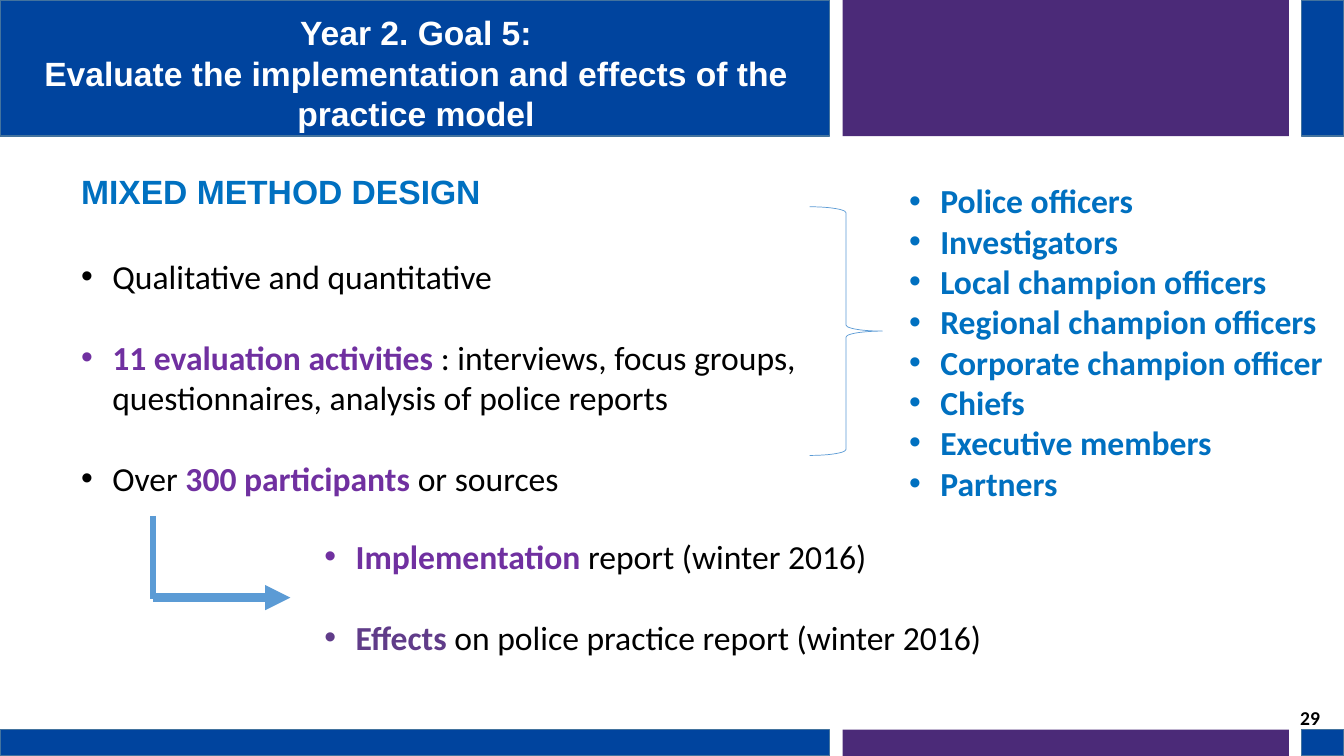
from dataclasses import dataclass

from lxml import etree
from pptx import Presentation
from pptx.dml.color import RGBColor
from pptx.enum.shapes import MSO_CONNECTOR, MSO_SHAPE
from pptx.enum.text import MSO_ANCHOR, PP_ALIGN
from pptx.oxml.ns import qn
from pptx.slide import Slide
from pptx.text.text import TextFrame
from pptx.util import Inches, Pt

RECTANGLE = MSO_SHAPE.RECTANGLE
RIGHT_BRACE = MSO_SHAPE.RIGHT_BRACE
STRAIGHT = MSO_CONNECTOR.STRAIGHT
TOP = MSO_ANCHOR.TOP
CENTER = PP_ALIGN.CENTER

COLORS = {
    "band_blue": "00449E",
    "band_edge": "43739E",
    "band_purple": "4B2A78",
    "black": "000000",
    "white": "FFFFFF",
    "purple": "7030A0",
    "soft_purple": "603C89",
    "blue": "0070C0",
    "line_blue": "5B9BD5",
}
SLIDE_WIDTH = Inches(13.33)
SLIDE_HEIGHT = Inches(7.5)
BULLET_INDENT = Inches(0.31)
BLANK_LINE = Pt(28.8)
TITLE_LAYOUT = 5


@dataclass(frozen=True)
class Area:
    """Percentages of the slide's width and height."""

    left: float
    top: float
    width: float
    height: float

    def box(self) -> tuple[int, int, int, int]:
        return (
            across(self.left),
            down(self.top),
            across(self.width),
            down(self.height),
        )


@dataclass(frozen=True)
class Band:
    area: Area
    fill: str
    edge: str | None = None


@dataclass(frozen=True)
class Piece:
    text: str
    color: str = "black"
    bold: bool = False


@dataclass(frozen=True)
class Label:
    area: Area
    piece: Piece
    size: int
    font: str
    wrap: bool = True


@dataclass(frozen=True)
class BulletList:
    area: Area
    items: list[list[Piece]]
    gap: int = 0


@dataclass(frozen=True)
class Segment:
    start: tuple[float, float]
    end: tuple[float, float]
    weight: float
    arrow: bool = False


def across(percent: float) -> int:
    return round(SLIDE_WIDTH * percent / 100)


def down(percent: float) -> int:
    return round(SLIDE_HEIGHT * percent / 100)


def color(name: str) -> RGBColor:
    return RGBColor.from_string(COLORS[name])


BANDS = [
    Band(Area(left, top, width, height), fill, edge)
    for top, height in ((0, 18), (96.5, 3.5))
    for left, width, fill, edge in (
        (0, 61.7, "band_blue", "band_edge"),
        (96.85, 3.15, "band_blue", "band_edge"),
        (62.7, 33.2, "band_purple", None),
    )
]

TITLE = Label(
    Area(1.05, 0.95, 59.8, 17.5),
    Piece(
        "Year 2. Goal 5:\vEvaluate the implementation and effects of the practice model",
        "white",
        True,
    ),
    24,
    "Arial",
)

LABELS = [
    Label(
        Area(5.3, 22, 31.5, 6.7),
        Piece("MIXED METHOD DESIGN", "blue", True),
        24,
        "Arial",
        wrap=False,
    ),
    Label(Area(96, 92.65, 3.3, 4.5), Piece("29", "black", True), 14, "Calibri"),
]

PEOPLE = [
    "Police officers",
    "Investigators",
    "Local champion officers",
    "Regional champion officers",
    "Corporate champion officer",
    "Chiefs",
    "Executive members",
    "Partners",
]

BULLET_LISTS = [
    BulletList(
        Area(5.3, 33.2, 56.5, 33.6),
        [
            [Piece("Qualitative and quantitative")],
            [
                Piece("11 evaluation activities ", "purple", True),
                Piece(": interviews, focus groups, questionnaires, analysis of police reports"),
            ],
            [Piece("Over "), Piece("300 participants ", "purple", True), Piece("or sources")],
        ],
        BLANK_LINE,
    ),
    BulletList(
        Area(66.9, 23.2, 33.1, 50.7),
        [[Piece(person, "blue", True)] for person in PEOPLE],
    ),
    BulletList(
        Area(23.4, 70.25, 66, 17.5),
        [
            [Piece("Implementation", "purple", True), Piece(" report (winter 2016)")],
            [Piece("Effects", "soft_purple", True), Piece(" on police practice report (winter 2016)")],
        ],
        BLANK_LINE,
    ),
]

BRACE = Area(60.25, 27.35, 5.4, 32.9)
SEGMENTS = [
    Segment((11.4, 68.25), (11.4, 79.2), 4.5),
    Segment((11.4, 79.05), (21.6, 79.05), 6, arrow=True),
]


def format_run(run, piece: Piece, size: int, font: str) -> None:
    run.font.name = font
    run.font.size = Pt(size)
    run.font.bold = piece.bold
    run.font.color.rgb = color(piece.color)


def fill_label(text_frame: TextFrame, label: Label) -> None:
    text_frame.word_wrap = label.wrap
    text_frame.text = label.piece.text
    for run in text_frame.paragraphs[0].runs:
        format_run(run, label.piece, label.size, label.font)


def draw_band(slide: Slide, band: Band) -> None:
    shape = slide.shapes.add_shape(RECTANGLE, *band.area.box())
    shape.shadow.inherit = False
    shape.fill.solid()
    shape.fill.fore_color.rgb = color(band.fill)
    if band.edge:
        shape.line.color.rgb = color(band.edge)
        shape.line.width = Pt(1)
    else:
        shape.line.fill.background()


def draw_bullets(slide: Slide, bullets: BulletList) -> None:
    text_frame = slide.shapes.add_textbox(*bullets.area.box()).text_frame
    text_frame.word_wrap = True
    for index, pieces in enumerate(bullets.items):
        paragraph = text_frame.add_paragraph() if index else text_frame.paragraphs[0]
        paragraph.space_before = bullets.gap if index else 0
        properties = paragraph._p.get_or_add_pPr()
        properties.set("marL", str(BULLET_INDENT))
        properties.set("indent", str(-BULLET_INDENT))
        etree.SubElement(properties, qn("a:buFont"), typeface="Arial")
        etree.SubElement(properties, qn("a:buChar"), char="•")
        for piece in pieces:
            run = paragraph.add_run()
            run.text = piece.text
            format_run(run, piece, 24, "Calibri")


def draw_brace(slide: Slide, area: Area) -> None:
    brace = slide.shapes.add_shape(RIGHT_BRACE, *area.box())
    brace.shadow.inherit = False
    brace.fill.background()
    brace.line.color.rgb = color("line_blue")
    brace.line.width = Pt(0.5)


def draw_segment(slide: Slide, segment: Segment) -> None:
    (left, top), (right, bottom) = segment.start, segment.end
    connector = slide.shapes.add_connector(
        STRAIGHT, across(left), down(top), across(right), down(bottom)
    )
    connector.line.color.rgb = color("line_blue")
    connector.line.width = Pt(segment.weight)
    if segment.arrow:
        etree.SubElement(connector.line._get_or_add_ln(), qn("a:tailEnd"), type="triangle")
    etree.SubElement(connector._element.spPr, qn("a:effectLst"))


def place_title(slide: Slide) -> None:
    title = slide.shapes.title
    title.left, title.top, title.width, title.height = TITLE.area.box()
    fill_label(title.text_frame, TITLE)
    title.text_frame.vertical_anchor = TOP
    title.text_frame.paragraphs[0].alignment = CENTER
    title._element.getparent().append(title._element)


def main() -> None:
    presentation = Presentation()
    presentation.slide_width = SLIDE_WIDTH
    presentation.slide_height = SLIDE_HEIGHT
    slide = presentation.slides.add_slide(presentation.slide_layouts[TITLE_LAYOUT])
    for band in BANDS:
        draw_band(slide, band)
    for bullets in BULLET_LISTS:
        draw_bullets(slide, bullets)
    draw_brace(slide, BRACE)
    for segment in SEGMENTS:
        draw_segment(slide, segment)
    for label in LABELS:
        fill_label(slide.shapes.add_textbox(*label.area.box()).text_frame, label)
    place_title(slide)
    presentation.save("out.pptx")


if __name__ == "__main__":
    main()
